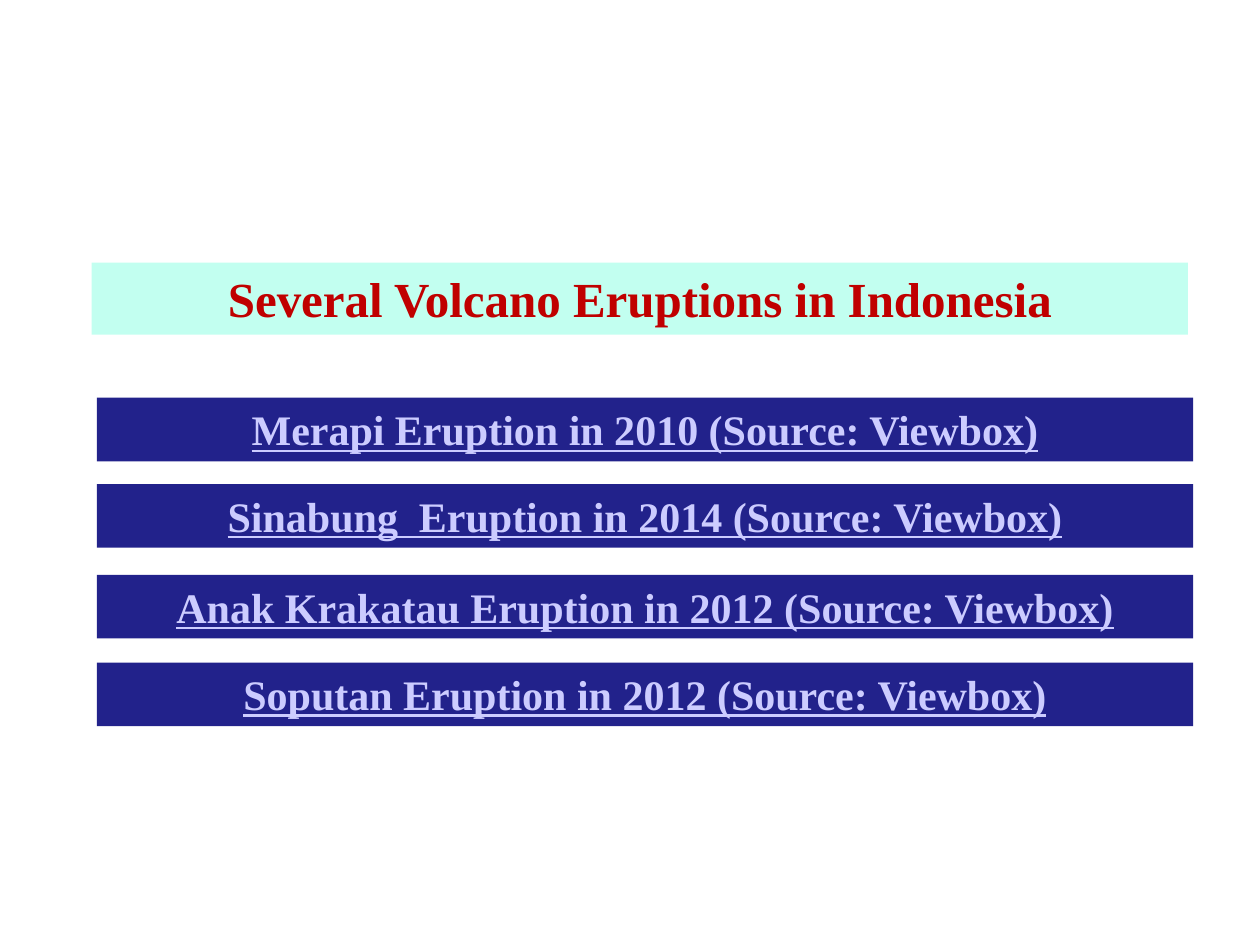
from dataclasses import dataclass

from pptx import Presentation
from pptx.dml.color import RGBColor
from pptx.enum.shapes import MSO_SHAPE
from pptx.enum.text import MSO_ANCHOR, MSO_AUTO_SIZE, PP_ALIGN
from pptx.slide import Slide
from pptx.util import Pt

MINT = RGBColor(0xC2, 0xFF, 0xF0)
RED = RGBColor(0xC0, 0x00, 0x00)
NAVY = RGBColor(0x22, 0x22, 0x8B)
LAVENDER = RGBColor(0xCC, 0xCC, 0xFF)

BANNER_WIDTH = 626.4
ERUPTIONS = [
    (227.3, "Merapi Eruption in 2010"),
    (276.7, "Sinabung  Eruption in 2014"),
    (328.5, "Anak Krakatau Eruption in 2012"),
    (378.7, "Soputan Eruption in 2012"),
]


@dataclass
class VolcanoPage:
    """Draws centred bold banners on one page in a shared style."""

    page: Slide
    font: str = "Times New Roman"

    def banner(self, left, top, height, text, size, fill, color, underline=False):
        box = self.page.shapes.add_shape(
            MSO_SHAPE.RECTANGLE, Pt(left), Pt(top), Pt(BANNER_WIDTH), Pt(height)
        )
        box.shadow.inherit = False
        box.fill.solid()
        box.fill.fore_color.rgb = fill
        box.line.fill.background()
        frame = box.text_frame
        frame.word_wrap = True
        frame.auto_size = MSO_AUTO_SIZE.SHAPE_TO_FIT_TEXT
        frame.vertical_anchor = MSO_ANCHOR.TOP
        para = frame.paragraphs[0]
        para.alignment = PP_ALIGN.CENTER
        span = para.add_run()
        span.text = text
        span.font.name = self.font
        span.font.size = Pt(size)
        span.font.bold = True
        span.font.underline = underline
        span.font.color.rgb = color


def main():
    deck = Presentation()
    deck.slide_width, deck.slide_height = Pt(720), Pt(540)
    volcanoes = VolcanoPage(deck.slides.add_slide(deck.slide_layouts[6]))
    volcanoes.banner(
        52.4, 150, 41.2, "Several Volcano Eruptions in Indonesia", 28, MINT, RED
    )
    for top, eruption in ERUPTIONS:
        volcanoes.banner(
            55.4, top, 36.35, f"{eruption} (Source: Viewbox)", 24, NAVY, LAVENDER, True
        )
    deck.save("out.pptx")


if __name__ == "__main__":
    main()
